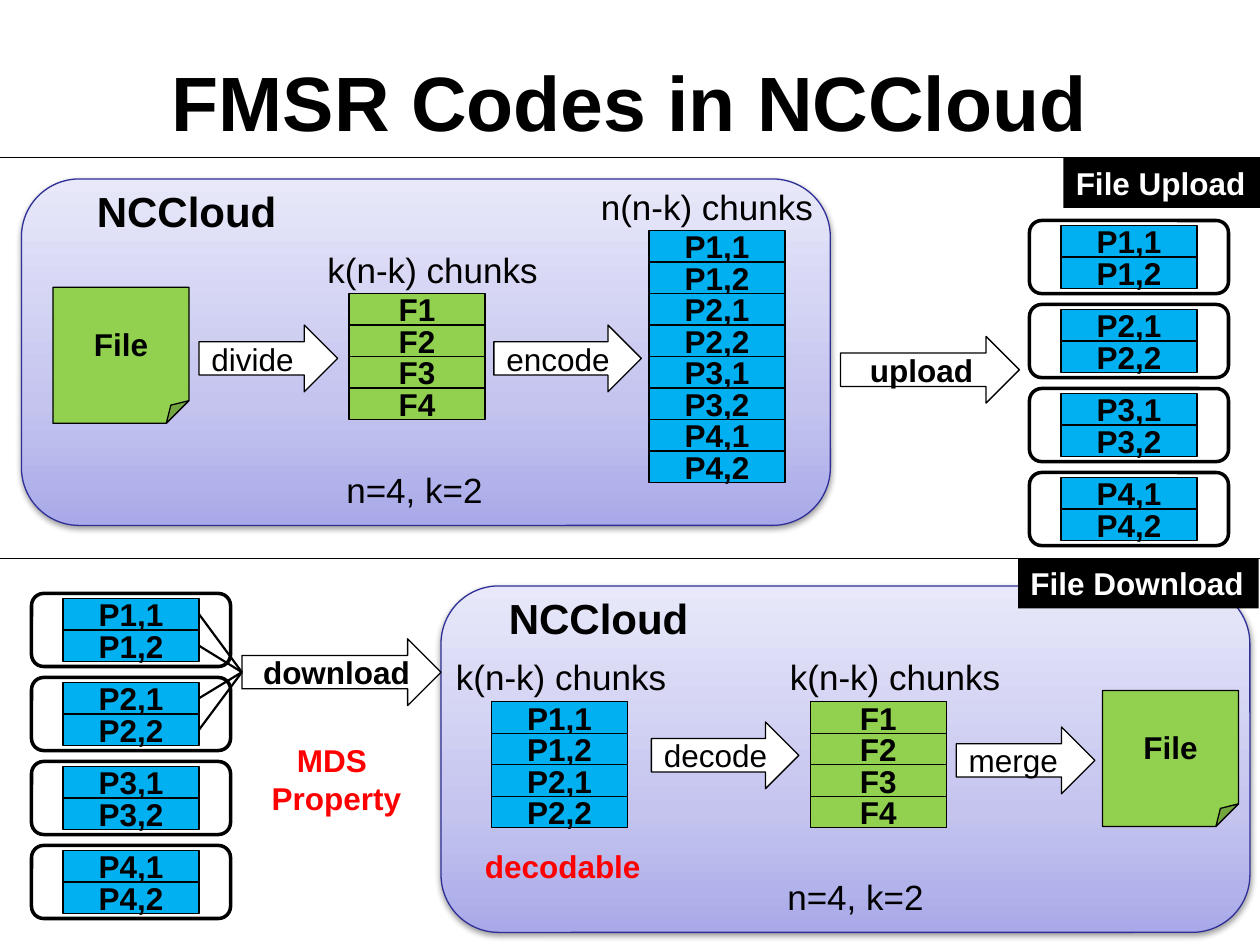
from copy import deepcopy
from pptx import Presentation
from pptx.dml.color import RGBColor
from pptx.enum.shapes import MSO_CONNECTOR, MSO_SHAPE
from pptx.enum.text import MSO_ANCHOR, PP_ALIGN
from pptx.oxml import parse_xml
from pptx.oxml.ns import nsdecls, qn
from pptx.util import Inches, Pt

BLACK = RGBColor(0x00, 0x00, 0x00)
WHITE = RGBColor(0xFF, 0xFF, 0xFF)
RED = RGBColor(0xFF, 0x00, 0x00)
BLUE = RGBColor(0x00, 0xB0, 0xF0)
GREEN = RGBColor(0x92, 0xD0, 0x50)
INDIGO = RGBColor(0x2F, 0x2F, 0x98)
PANEL_STOPS = [
    (0, RGBColor(0xA9, 0xA9, 0xE9)),
    (0.35, RGBColor(0xC4, 0xC4, 0xEF)),
    (1, RGBColor(0xE8, 0xE8, 0xFA)),
]
RECT, ROUNDED = MSO_SHAPE.RECTANGLE, MSO_SHAPE.ROUNDED_RECTANGLE
ARROW, FOLDED = MSO_SHAPE.RIGHT_ARROW, MSO_SHAPE.FOLDED_CORNER
STRAIGHT = MSO_CONNECTOR.STRAIGHT
LEFT, CENTER = PP_ALIGN.LEFT, PP_ALIGN.CENTER
TOP, MIDDLE = MSO_ANCHOR.TOP, MSO_ANCHOR.MIDDLE
LEFT_SIDE, RIGHT_SIDE = 1, 3

CHUNK_WIDTH, CHUNK_HEIGHT = 1.08, 0.25
SERVER_PITCH = 2 / 3
FILE_CHUNKS = ["F1", "F2", "F3", "F4"]
CODE_CHUNKS = [f"P{server},{part}" for server in range(1, 5) for part in (1, 2)]


class Canvas:
    font = "Arial"

    def __init__(self, slide):
        self.slide = slide

    def add_words(self, shape, lines, size=18, color=BLACK, bold=False,
                  align=LEFT, anchor=TOP, wrap=True):
        frame = shape.text_frame
        frame.word_wrap = wrap
        frame.vertical_anchor = anchor
        for index, line in enumerate(lines):
            para = frame.add_paragraph() if index else frame.paragraphs[0]
            para.alignment = align
            span = para.add_run()
            span.text = line
            span.font.name = self.font
            span.font.size = Pt(size)
            span.font.bold = bold
            span.font.color.rgb = color

    def shape(self, kind, left, top, width, height, fill=None, line=BLACK, weight=0.75):
        box = self.slide.shapes.add_shape(
            kind, Inches(left), Inches(top), Inches(width), Inches(height))
        box.shadow.inherit = False
        if fill is None:
            box.fill.background()
        else:
            box.fill.solid()
            box.fill.fore_color.rgb = fill
        if line is None:
            box.line.fill.background()
        else:
            box.line.color.rgb = line
            box.line.width = Pt(weight)
        return box

    def text(self, left, top, width, height, *lines, **style):
        box = self.slide.shapes.add_textbox(
            Inches(left), Inches(top), Inches(width), Inches(height))
        self.add_words(box, lines, **style)

    def label(self, left, top, width, text, size=20, height=0.44, **style):
        self.text(left, top, width, height, text, size=size, wrap=False, **style)

    def panel(self, left, top):
        box = self.shape(ROUNDED, left, top, 6.42, 2.75, WHITE, INDIGO)
        box.fill.gradient()
        box.fill.gradient_angle = 90
        stop_list = box._element.spPr.find(qn("a:gradFill")).find(qn("a:gsLst"))
        stop_list.append(deepcopy(stop_list[-1]))
        for stop, (position, color) in zip(box.fill.gradient_stops, PANEL_STOPS):
            stop.position = position
            stop.color.rgb = color
        box._element.spPr.find(qn("a:effectLst")).append(parse_xml(
            f'<a:outerShdw {nsdecls("a")} blurRad="40000" dist="20000" dir="5400000" '
            'rotWithShape="0"><a:srgbClr val="000000"><a:alpha val="38000"/>'
            '</a:srgbClr></a:outerShdw>'))

    def stack(self, left, top, names, fill):
        boxes = []
        for index, name in enumerate(names):
            box = self.shape(RECT, left, top + index * CHUNK_HEIGHT,
                             CHUNK_WIDTH, CHUNK_HEIGHT, fill)
            self.add_words(box, [name], bold=True, align=CENTER, anchor=MIDDLE)
            boxes.append(box)
        return boxes

    def servers(self, left, top):
        chunks = []
        for index in range(4):
            row = top + index * SERVER_PITCH
            names = CODE_CHUNKS[2 * index:2 * index + 2]
            chunks += self.stack(left + 0.25, row + 0.04, names, BLUE)
            self.shape(ROUNDED, left, row, 1.58, 0.58, weight=2)
        return chunks

    def arrow(self, left, top, width, text, **style):
        box = self.shape(ARROW, left, top, width, 0.53, WHITE)
        self.add_words(box, [text], anchor=MIDDLE, **style)
        return box

    def file(self, left, top):
        box = self.shape(FOLDED, left, top, 1.08, 1.08, GREEN)
        self.add_words(box, ["File"], bold=True, align=CENTER, anchor=MIDDLE)

    def tag(self, left, top, width, text):
        box = self.shape(RECT, left, top, width, 0.4, BLACK, None)
        self.add_words(box, [text], color=WHITE, bold=True, wrap=False)

    def line(self, start=(0, 0), end=(0, 0), weight=0.75):
        link = self.slide.shapes.add_connector(
            STRAIGHT, *(Inches(value) for value in (*start, *end)))
        link.line.color.rgb = BLACK
        link.line.width = Pt(weight)
        link._element.spPr.append(parse_xml(f'<a:effectLst {nsdecls("a")}/>'))
        return link

    def join(self, source, target):
        link = self.line(weight=1.25)
        link.begin_connect(source, RIGHT_SIDE)
        link.end_connect(target, LEFT_SIDE)


def draw_upload(canvas):
    canvas.panel(0.17, 1.42)
    canvas.label(0.67, 1.42, 1.64, "NCCloud", size=24, height=0.5, bold=True)
    canvas.file(0.42, 2.28)
    canvas.arrow(1.58, 2.58, 1.1, "divide")
    canvas.label(2.5, 1.92, 1.88, "k(n-k) chunks")
    canvas.stack(2.77, 2.33, FILE_CHUNKS, GREEN)
    canvas.arrow(3.92, 2.58, 1.17, "encode")
    canvas.label(4.67, 1.42, 1.9, "n(n-k) chunks")
    canvas.stack(5.15, 1.83, CODE_CHUNKS, BLUE)
    canvas.text(2.5, 3.67, 1.58, 0.44, "n=4, k=2", size=20, align=CENTER)
    canvas.arrow(6.67, 2.67, 1.42, "upload", bold=True, align=CENTER)
    canvas.servers(8.17, 1.75)
    canvas.line((0, 1.25), (10, 1.25))
    canvas.tag(8.44, 1.25, 1.56, "File Upload")


def draw_download(canvas):
    chunks = canvas.servers(0.25, 4.71)
    canvas.panel(3.5, 4.65)
    canvas.label(3.94, 4.65, 1.64, "NCCloud", size=24, height=0.5, bold=True)
    download = canvas.arrow(1.92, 5.07, 1.58, " download", bold=True)
    for chunk in chunks[:4]:
        canvas.join(chunk, download)
    canvas.text(2.05, 5.83, 1.24, 0.71, "MDS ", "Property",
                color=RED, bold=True, align=CENTER, wrap=False)
    canvas.label(3.52, 5.15, 1.9, "k(n-k) chunks")
    canvas.stack(3.9, 5.57, CODE_CHUNKS[:4], BLUE)
    canvas.label(3.75, 6.67, 1.45, "decodable", size=18, height=0.4,
                 color=RED, bold=True)
    canvas.arrow(5.17, 5.73, 1.17, "decode")
    canvas.label(6.17, 5.15, 1.88, "k(n-k) chunks")
    canvas.stack(6.43, 5.57, FILE_CHUNKS, GREEN)
    canvas.arrow(7.59, 5.77, 1.1, "merge")
    canvas.file(8.75, 5.48)
    canvas.text(6, 6.9, 1.58, 0.44, "n=4, k=2", size=20, align=CENTER)
    canvas.line((0, 4.43), (10, 4.43))
    canvas.tag(8.08, 4.43, 1.91, "File Download")


def main():
    deck = Presentation()
    deck.slide_width, deck.slide_height = Inches(10), Inches(7.5)
    page = deck.slides.add_slide(deck.slide_layouts[6])
    canvas = Canvas(page)
    canvas.text(0.5, 0.17, 9, 1.25, "FMSR Codes in NCCloud",
                size=44, bold=True, align=CENTER, anchor=MIDDLE)
    draw_upload(canvas)
    draw_download(canvas)
    deck.save("out.pptx")


if __name__ == "__main__":
    main()
